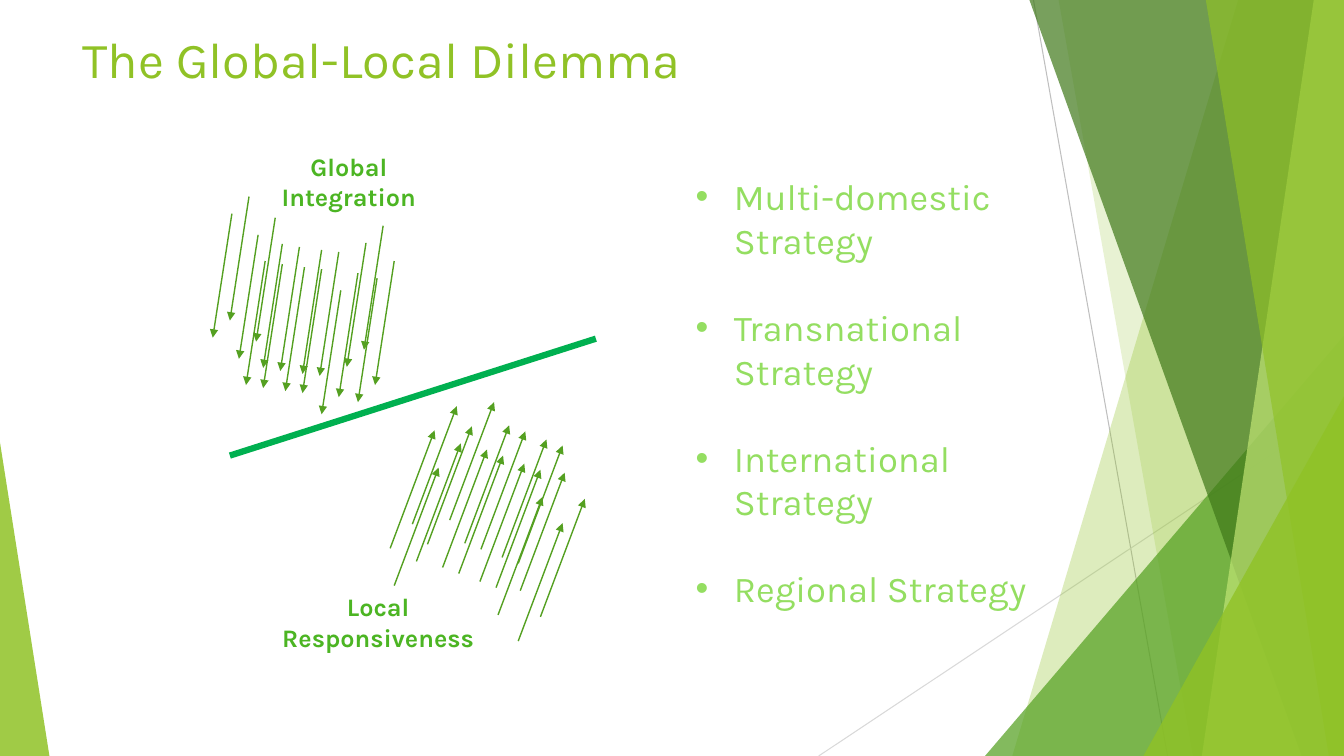
from lxml.etree import SubElement
from pptx import Presentation
from pptx.dml.color import RGBColor
from pptx.enum.shapes import MSO_CONNECTOR, MSO_SHAPE
from pptx.enum.text import MSO_ANCHOR, PP_ALIGN
from pptx.oxml.ns import qn
from pptx.util import Inches, Pt

COLS, ROWS = 13.33, 7.5  # the grid has square cells, one inch wide
LIME, GREEN, FOREST = "90C226", "54A021", "3F7819"
PALE, LABEL, BULLET, BEAM = "C0E474", "4CB523", "94DE61", "00B050"

# left edge of each facet at the top and at the bottom, colour, opacity
BACK_FACETS = [(12.28, 10.04, LIME, 30), (10.5, 11.83, LIME, 20)]
FRONT_FACETS = [(10.21, 12.91, FOREST, 70), (13.03, 11.92, PALE, 70),
                (11.96, 13.18, LIME, 65)]

# each swarm: arrow vector, shift of its second layer, arrow starts
GLOBAL_SWARM = ((-0.19, 1.23), (-0.17, 0.17), [
    (2.47, 1.95), (3.19, 2.48), (3.8, 2.24), (3.36, 2.5), (3.55, 2.71),
    (2.97, 2.45), (2.8, 2.42), (2.73, 2.16), (3.91, 2.59)])
LOCAL_SWARM = ((0.44, -1.17), (0.22, -0.24), [
    (5.14, 6.36), (4.55, 5.69), (3.91, 5.81), (4.39, 5.63), (4.24, 5.4),
    (4.76, 5.77), (4.92, 5.83), (4.94, 6.1), (3.87, 5.44)])

STRATEGIES = ["Multi-domestic Strategy", "Transnational Strategy",
              "International Strategy", "Regional Strategy"]


def rgb(hex_code):
    return RGBColor.from_string(hex_code)


class Painter:
    """Holds the font and the current slide; lengths are grid cells."""

    font = "Karla"

    def __init__(self, slide):
        self.s = slide

    def paint(self, sp, color, opacity):
        sp.shadow.inherit = False
        sp.line.fill.background()
        sp.fill.solid()
        sp.fill.fore_color.rgb = rgb(color)
        clr = sp.fill._xPr.find(qn("a:solidFill"))[0]
        SubElement(clr, qn("a:alpha"), val=str(opacity * 1000))

    def facet(self, top_x, bottom_x, color, opacity):
        """Fill the area from a slanted left edge to the slide's right edge."""
        fb = self.s.shapes.build_freeform(Inches(top_x), 0)
        corners = [(COLS, 0), (COLS, ROWS), (bottom_x, ROWS)]
        fb.add_line_segments([(Inches(x), Inches(y)) for x, y in corners])
        self.paint(fb.convert_to_shape(), color, opacity)

    def triangle(self, x, y, w, apex, color, opacity):
        """Stand a triangle on the slide's bottom edge."""
        sp = self.s.shapes.add_shape(
            MSO_SHAPE.ISOSCELES_TRIANGLE,
            Inches(x), Inches(y), Inches(w), Inches(ROWS - y))
        sp.adjustments[0] = apex
        self.paint(sp, color, opacity)

    def line(self, start, end, color, width, arrow=False):
        cn = self.s.shapes.add_connector(
            MSO_CONNECTOR.STRAIGHT, *[Inches(v) for v in (*start, *end)])
        cn.line.color.rgb = rgb(color)
        cn.line.width = Pt(width)
        if arrow:
            SubElement(cn.line._get_or_add_ln(), qn("a:tailEnd"), type="triangle")
        SubElement(cn._element.spPr, qn("a:effectLst"))

    def swarm(self, vector, shift, starts):
        """Draw parallel arrows in two shifted layers."""
        for layer in range(2):
            for x, y in starts:
                x, y = x + layer * shift[0], y + layer * shift[1]
                self.line((x, y), (x + vector[0], y + vector[1]), GREEN, 1, True)

    def run(self, p, text, size, color, bold=False):
        r = p.add_run()
        r.text = text
        r.font.name, r.font.size, r.font.bold = self.font, Pt(size), bold
        r.font.color.rgb = rgb(color)

    def title(self, text, x, y, w, h):
        sp = self.s.shapes.title
        sp.left, sp.top, sp.width, sp.height = map(Inches, (x, y, w, h))
        tf = sp.text_frame
        tf.vertical_anchor = MSO_ANCHOR.TOP
        p = tf.paragraphs[0]
        p.alignment = PP_ALIGN.LEFT
        self.run(p, text, 36, LIME)

    def box(self, x, y, w, h):
        tf = self.s.shapes.add_textbox(*map(Inches, (x, y, w, h))).text_frame
        tf.word_wrap = True
        return tf

    def label(self, text, x, y, w, h):
        p = self.box(x, y, w, h).paragraphs[0]
        p.alignment = PP_ALIGN.CENTER
        self.run(p, text, 18, LABEL, bold=True)

    def bullets(self, items, x, y, w, h):
        tf = self.box(x, y, w, h)
        for i, item in enumerate(items):
            p = tf.add_paragraph() if i else tf.paragraphs[0]
            if i:
                p.space_before = Pt(31)
            pPr = p._p.get_or_add_pPr()
            pPr.set("marL", str(Inches(0.38)))
            pPr.set("indent", str(-Inches(0.38)))
            SubElement(pPr, qn("a:buFont"), typeface="Arial")
            SubElement(pPr, qn("a:buChar"), char="•")
            self.run(p, item, 26, BULLET)


def main():
    prs = Presentation()
    prs.slide_width, prs.slide_height = Inches(COLS), Inches(ROWS)
    art = Painter(prs.slides.add_slide(prs.slide_layouts[5]))

    art.line((10.25, 0), (11.58, ROWS), "BFBFBF", 0.75)
    art.line((COLS, 4.03), (8.12, ROWS), "D9D9D9", 0.75)
    for facet in BACK_FACETS:
        art.facet(*facet)
    art.triangle(9.77, 3.33, 3.56, 1, GREEN, 72)
    for facet in FRONT_FACETS:
        art.facet(*facet)
    art.triangle(11.34, 3.93, 1.99, 1, LIME, 80)
    art.triangle(0, 4.39, 0.49, 0, LIME, 85)

    art.line((2.28, 4.52), (5.91, 3.36), BEAM, 4.5)
    art.swarm(*GLOBAL_SWARM)
    art.swarm(*LOCAL_SWARM)
    art.label("Global Integration", 2.68, 1.45, 1.56, 0.71)
    art.label("Local Responsiveness", 2.59, 5.82, 2.32, 0.71)

    art.title("The Global-Local Dilemma", 0.72, 0.23, 9.4, 1.44)
    art.bullets(STRATEGIES, 6.8, 1.68, 3.89, 4.78)
    prs.save("out.pptx")


if __name__ == "__main__":
    main()
